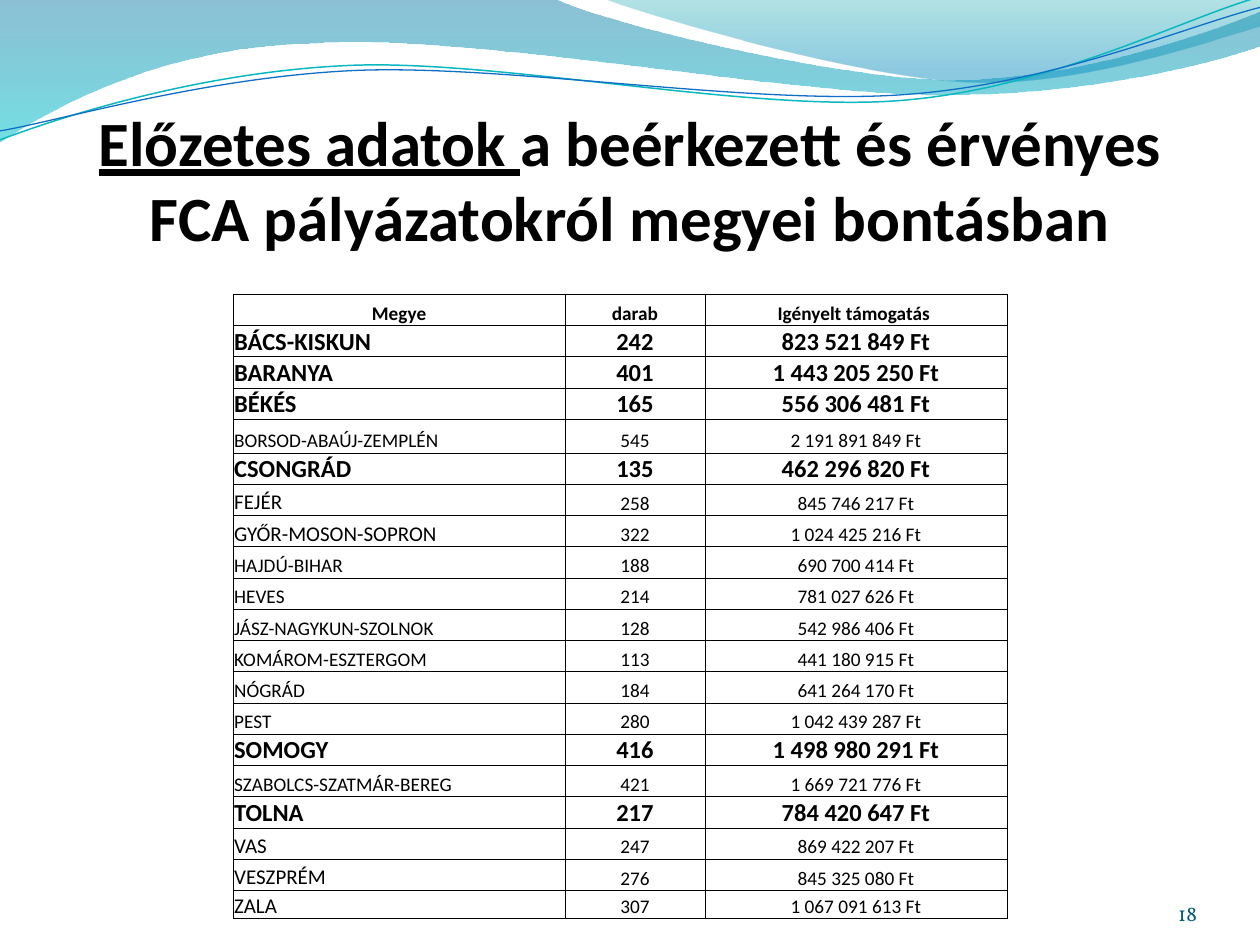
from math import cos, radians, sin

from lxml.etree import Element, SubElement
from pptx import Presentation
from pptx.dml.color import RGBColor
from pptx.enum.text import MSO_ANCHOR, PP_ALIGN
from pptx.oxml.ns import qn
from pptx.util import Cm, Pt

BLACK = RGBColor(0x00, 0x00, 0x00)
OCEAN = RGBColor(0x00, 0x74, 0xA1)
AQUA = RGBColor(0x00, 0xC6, 0xCF)
TEAL = RGBColor(0x00, 0xA1, 0xA9)
SKY = RGBColor(0x00, 0x8B, 0xBF)
TEAL_LINE = RGBColor(0x0A, 0xB8, 0xBF)
BLUE_LINE = RGBColor(0x0F, 0x6F, 0xC6)
NUMBER_COLOR = RGBColor(0x04, 0x5D, 0x75)

# Outlines in cm: a pair is a straight step, a six-tuple a Bezier curve
BROAD_WAVE = [
    (0, 0), (11.18, -0.03),
    (12.09, 0.43, 16.87, 1.6, 19.25, 1.6),
    (21.67, 1.6, 24.33, 0.66, 25.4, 0.23),
    (25.43, 0.91),
    (24.97, 1.12, 22.1, 1.93, 18.95, 1.91),
    (15.8, 1.91, 9.7, 0.71, 6.53, 0.86),
    (3.28, 0.91, 1.17, 2.11, -0.03, 2.87),
    (0, 0),
]
RIGHT_WAVE = [
    (12.17, -0.03),
    (12.93, 0.28, 17.32, 1.57, 19.53, 1.65),
    (21.74, 1.75, 24.41, 0.81, 25.4, 0.53),
    (25.4, 0), (12.17, -0.03),
]
TEAL_CURVE = [
    (0, 2.82),
    (1.22, 2.36, 4.01, 1.45, 7.04, 1.32),
    (10.03, 1.19, 15.06, 2.26, 18.11, 2.03),
    (21.16, 1.8, 23.83, 0.38, 25.35, -0.05),
]
BLUE_CURVE = [
    (0, 2.64),
    (1.19, 2.44, 4.17, 1.55, 7.19, 1.42),
    (10.24, 1.3, 15.16, 2.13, 18.21, 1.91),
    (21.23, 1.7, 23.9, 0.53, 25.4, 0.15),
]
CURVE_ROTATION = 357.3

HEADER = ("Megye", "darab", "Igényelt támogatás ")
# County, number of applications, requested support, size of the county name
COUNTIES = [
    ("BÁCS-KISKUN", "242", "823 521 849 Ft", 14),
    ("BARANYA", "401", "1 443 205 250 Ft", 14),
    ("BÉKÉS", "165", "556 306 481 Ft", 14),
    ("BORSOD-ABAÚJ-ZEMPLÉN", "545", "2 191 891 849 Ft", 11),
    ("CSONGRÁD", "135", "462 296 820 Ft", 14),
    ("FEJÉR", "258", "845 746 217 Ft", 12),
    ("GYŐR-MOSON-SOPRON", "322", "1 024 425 216 Ft", 12),
    ("HAJDÚ-BIHAR", "188", "690 700 414 Ft", 11),
    ("HEVES", "214", "781 027 626 Ft", 11),
    ("JÁSZ-NAGYKUN-SZOLNOK", "128", "542 986 406 Ft", 11),
    ("KOMÁROM-ESZTERGOM", "113", "441 180 915 Ft", 11),
    ("NÓGRÁD", "184", "641 264 170 Ft", 11),
    ("PEST", "280", "1 042 439 287 Ft", 11),
    ("SOMOGY", "416", "1 498 980 291 Ft", 14),
    ("SZABOLCS-SZATMÁR-BEREG", "421", "1 669 721 776 Ft", 11),
    ("TOLNA", "217", "784 420 647 Ft", 14),
    ("VAS", "247", "869 422 207 Ft", 12),
    ("VESZPRÉM", "276", "845 325 080 Ft", 12),
    ("ZALA", "307", "1 067 091 613 Ft", 12),
]
COLUMN_WIDTHS = (6.69, 2.82, 6.09)
ROW_HEIGHT = 0.63
SPECIAL_HEIGHTS = {4: 0.68, 19: 0.57}


def format_span(span, size, color=BLACK, font="Calibri", bold=False, underline=False):
    span.font.name = font
    span.font.size = Pt(size)
    span.font.bold = bold
    span.font.underline = underline
    span.font.color.rgb = color


def set_margins(target, left, top, right, bottom):
    target.margin_left, target.margin_top = Cm(left), Cm(top)
    target.margin_right, target.margin_bottom = Cm(right), Cm(bottom)


def turn(x, y, degrees):
    angle = radians(degrees)
    return x * cos(angle) - y * sin(angle), x * sin(angle) + y * cos(angle)


def bend_segments(shape, outline):
    """Join the three straight segments of each six-tuple into one curve."""
    segments = iter(list(shape._element.iter(qn("a:lnTo"))))
    for step in outline[1:]:
        group = [next(segments) for _ in range(len(step) // 2)]
        if len(group) == 3:
            curve = Element(qn("a:cubicBezTo"))
            group[0].addprevious(curve)
            for segment in group:
                curve.append(segment[0])
                segment.getparent().remove(segment)


def add_outline(page, outline, closed, rotation=0):
    points = [turn(*step[i:i + 2], -rotation) for step in outline for i in range(0, len(step), 2)]
    start, *rest = [(Cm(x), Cm(y)) for x, y in points]
    builder = page.shapes.build_freeform(*start)
    builder.add_line_segments(rest, close=closed)
    shape = builder.convert_to_shape()
    bend_segments(shape, outline)
    # The shape turns about its own centre, so the centre is turned as well
    center_x, center_y = turn(shape.left + shape.width / 2, shape.top + shape.height / 2, rotation)
    shape.left = round(center_x - shape.width / 2)
    shape.top = round(center_y - shape.height / 2)
    shape.rotation = rotation
    shape.shadow.inherit = False
    return shape


def add_wave(page, outline, stops):
    shape = add_outline(page, outline, closed=True)
    shape.line.fill.background()
    shape.fill.gradient()
    shape.fill.gradient_angle = 270
    for stop, (position, color, _) in zip(shape.fill.gradient_stops, stops):
        stop.position = position
        stop.color.rgb = color
    for color_node, (_, _, opacity) in zip(shape._element.spPr.iter(qn("a:srgbClr")), stops):
        SubElement(color_node, qn("a:alpha"), val=str(opacity * 1000))


def add_curve(page, outline, color, width):
    shape = add_outline(page, outline, closed=False, rotation=CURVE_ROTATION)
    shape.fill.background()
    shape.line.color.rgb = color
    shape.line.width = Pt(width)


def add_title(page):
    title = page.shapes.title
    title._element.getparent().append(title._element)  # in front of the waves
    title.left, title.top, title.width, title.height = Cm(1.27), Cm(1.96), Cm(22.86), Cm(3.17)
    frame = title.text_frame
    frame.word_wrap = True
    frame.vertical_anchor = MSO_ANCHOR.BOTTOM
    set_margins(frame, 0, 0.13, 0, 0)
    para = frame.paragraphs[0]
    para.alignment = PP_ALIGN.CENTER
    for text, underline in (("Előzetes adatok ", True),
                            ("a beérkezett és érvényes FCA pályázatokról megyei bontásban", False)):
        span = para.add_run()
        span.text = text
        format_span(span, 36, bold=True, underline=underline)


def fill_cell(cell, text, size, bold, alignment):
    properties = cell._tc.get_or_add_tcPr()
    for side in ("a:lnL", "a:lnR", "a:lnT", "a:lnB"):
        line = SubElement(properties, qn(side), w=str(Pt(0.5)))
        SubElement(SubElement(line, qn("a:solidFill")), qn("a:srgbClr"), val=str(BLACK))
    cell.fill.background()
    cell.vertical_anchor = MSO_ANCHOR.BOTTOM
    set_margins(cell, 0.02, 0.02, 0.02, 0)
    para = cell.text_frame.paragraphs[0]
    para.text = text
    para.alignment = alignment
    format_span(para.runs[0], size, bold=bold)


def add_county_table(page):
    row_count = len(COUNTIES) + 1
    heights = [SPECIAL_HEIGHTS.get(index, ROW_HEIGHT) for index in range(row_count)]
    table = page.shapes.add_table(row_count, len(HEADER), Cm(4.7), Cm(5.93),
                                  Cm(sum(COLUMN_WIDTHS)), Cm(sum(heights))).table
    table.first_row = table.horz_banding = False
    for column, width in zip(table.columns, COLUMN_WIDTHS):
        column.width = Cm(width)
    for row, height in zip(table.rows, heights):
        row.height = Cm(height)
    for column, text in enumerate(HEADER):
        fill_cell(table.cell(0, column), text, 11, True, PP_ALIGN.CENTER)
    for row, (county, count, support, size) in enumerate(COUNTIES, start=1):
        bold = size == 14
        fill_cell(table.cell(row, 0), county, size, bold, PP_ALIGN.LEFT)
        for column, text in enumerate((count, support), start=1):
            fill_cell(table.cell(row, column), text, 14 if bold else 11, bold, PP_ALIGN.CENTER)


def add_page_number(page):
    box = page.shapes.add_textbox(Cm(22.02), Cm(17.65), Cm(2.11), Cm(1.02))
    frame = box.text_frame
    frame.word_wrap = True
    frame.vertical_anchor = MSO_ANCHOR.BOTTOM
    set_margins(frame, 0, 0, 0, 0)
    frame.text = "18"
    para = frame.paragraphs[0]
    para.alignment = PP_ALIGN.RIGHT
    format_span(para.runs[0], 12, NUMBER_COLOR, "Vollkorn")


def main():
    deck = Presentation()
    deck.slide_width, deck.slide_height = Cm(25.4), Cm(19.05)
    page = deck.slides.add_slide(deck.slide_layouts[5])
    # Waves along the top
    add_wave(page, BROAD_WAVE, [(0, OCEAN, 45), (1, AQUA, 55)])
    add_wave(page, RIGHT_WAVE, [(0, TEAL, 30), (0.8, SKY, 45)])
    add_curve(page, TEAL_CURVE, TEAL_LINE, 0.85)
    add_curve(page, BLUE_CURVE, BLUE_LINE, 0.75)
    # Title, table and page number
    add_title(page)
    add_county_table(page)
    add_page_number(page)
    deck.save("out.pptx")


if __name__ == "__main__":
    main()
